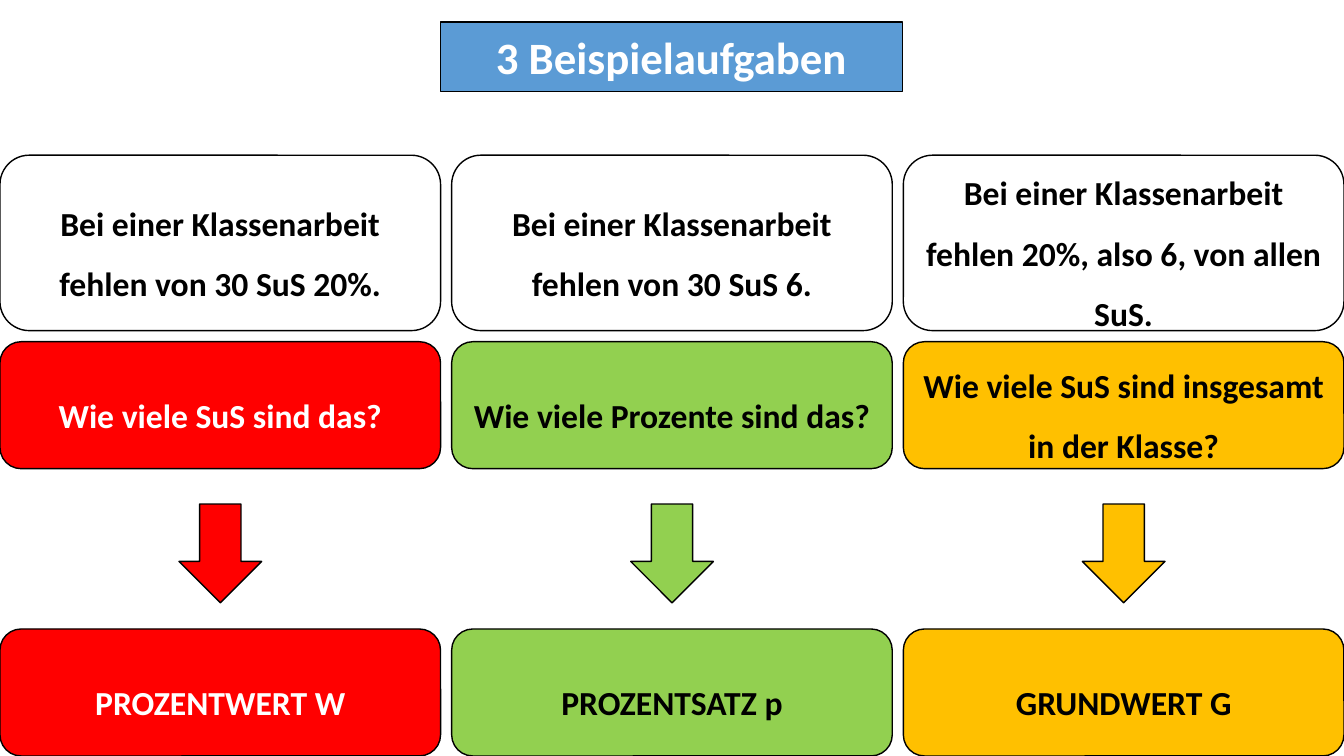
from dataclasses import dataclass

from pptx import Presentation
from pptx import util as u
from pptx.dml.color import RGBColor
from pptx.enum import shapes, text
from pptx.oxml import parse_xml
from pptx.oxml.ns import nsdecls


@dataclass(frozen=True)
class Theme:
    font: str = "Calibri"
    title_size: int = 32
    body_size: int = 24
    blue: str = "5B9BD5"
    red: str = "FF0000"
    green: str = "92D050"
    amber: str = "FFC000"
    white: str = "FFFFFF"
    black: str = "000000"


theme = Theme()


def paint(shape, fill):
    shape.fill.solid()
    shape.fill.fore_color.rgb = RGBColor.from_string(fill)
    shape.line.color.rgb = RGBColor.from_string(theme.black)
    shape.line.width = u.Pt(1)
    shape.shadow.inherit = False


def write(shape, wording, size, color, spacing):
    frame = shape.text_frame
    frame.text = wording
    frame_format = {"word_wrap": True, "auto_size": text.MSO_AUTO_SIZE.NONE,
                    "vertical_anchor": text.MSO_ANCHOR.MIDDLE}
    for name, value in frame_format.items():
        setattr(frame, name, value)
    paragraph = frame.paragraphs[0]
    paragraph.alignment = text.PP_ALIGN.CENTER
    paragraph.line_spacing = spacing
    font_format = {"name": theme.font, "size": u.Pt(size), "bold": True}
    for name, value in font_format.items():
        setattr(paragraph.font, name, value)
    paragraph.font.color.rgb = RGBColor.from_string(color)


presentation = Presentation()
presentation.slide_width = u.Inches(13.33)
presentation.slide_height = u.Inches(7.5)
slide = presentation.slides.add_slide(presentation.slide_layouts[5])

# Title in a rounded box
title = slide.shapes.title
title_place = {"left": 4.37, "top": 0.22, "width": 4.58, "height": 0.69}
for name, value in title_place.items():
    setattr(title, name, u.Inches(value))
title.element.spPr.append(parse_xml(
    f'<a:prstGeom {nsdecls("a")} prst="roundRect"><a:avLst/></a:prstGeom>'))
paint(title, theme.blue)
write(title, "3 Beispielaufgaben", theme.title_size, theme.white, 1.0)

# One column per task: colour, text colour, task, question, sought value
columns = [
    (theme.red, theme.white, "Bei einer Klassenarbeit fehlen von 30 SuS 20%.",
     "Wie viele SuS sind das?", "PROZENTWERT W"),
    (theme.green, theme.black, "Bei einer Klassenarbeit fehlen von 30 SuS 6.",
     "Wie viele Prozente sind das?", "PROZENTSATZ p"),
    (theme.amber, theme.black,
     "Bei einer Klassenarbeit fehlen 20%, also 6, von allen SuS.",
     "Wie viele SuS sind insgesamt in der Klasse?", "GRUNDWERT G"),
]
box_width, column_step = 4.37, 4.48
arrow_width, arrow_height = 0.82, 0.98

for index, (fill, color, task, question, answer) in enumerate(columns):
    left = index * column_step

    # Task, question and answer boxes
    boxes = [
        (1.54, 1.74, theme.white, theme.black, task),
        (3.39, 1.26, fill, color, question),
        (6.24, 1.26, fill, color, answer),
    ]
    for top, height, box_fill, text_color, wording in boxes:
        box = slide.shapes.add_shape(
            shapes.MSO_SHAPE.ROUNDED_RECTANGLE, u.Inches(left), u.Inches(top),
            u.Inches(box_width), u.Inches(height))
        paint(box, box_fill)
        write(box, wording, theme.body_size, text_color, 1.5)

    # Arrow from question to answer
    arrow = slide.shapes.add_shape(
        shapes.MSO_SHAPE.DOWN_ARROW,
        u.Inches(left + (box_width - arrow_width) / 2), u.Inches(5),
        u.Inches(arrow_width), u.Inches(arrow_height))
    paint(arrow, fill)

presentation.save("out.pptx")
